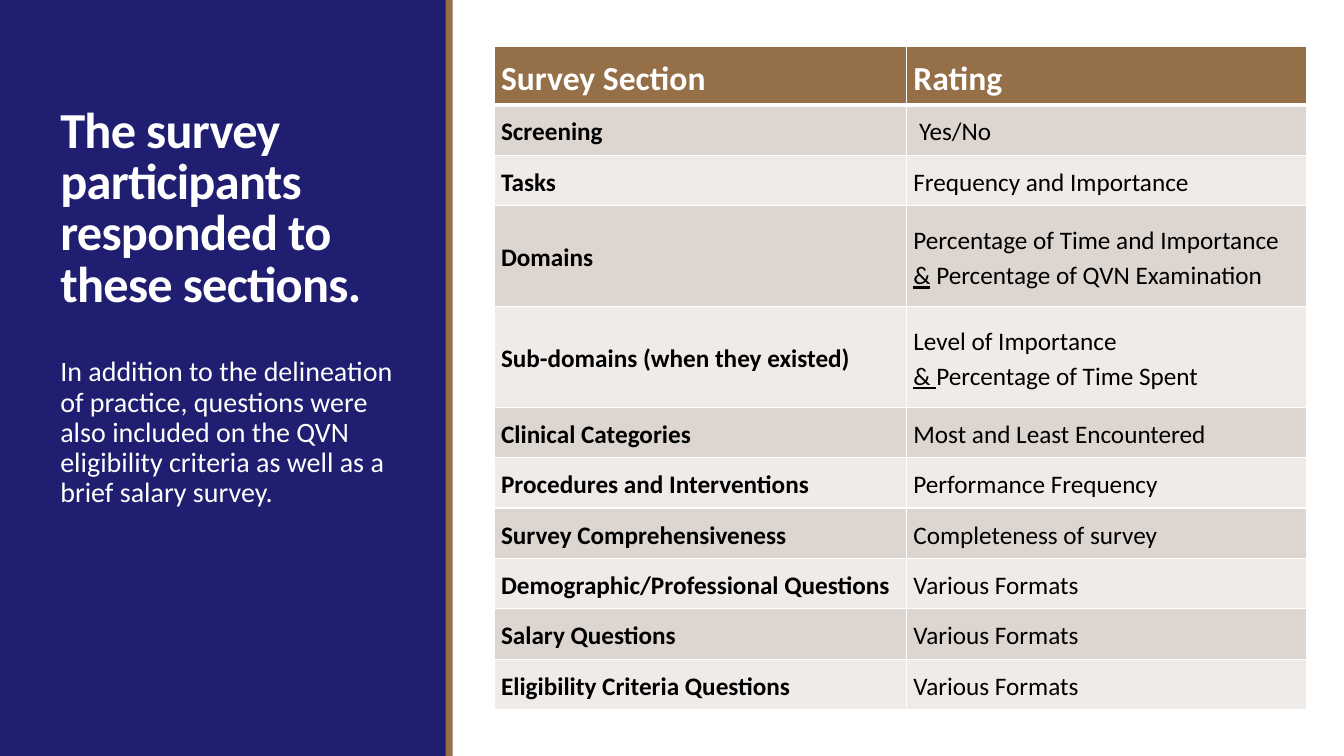
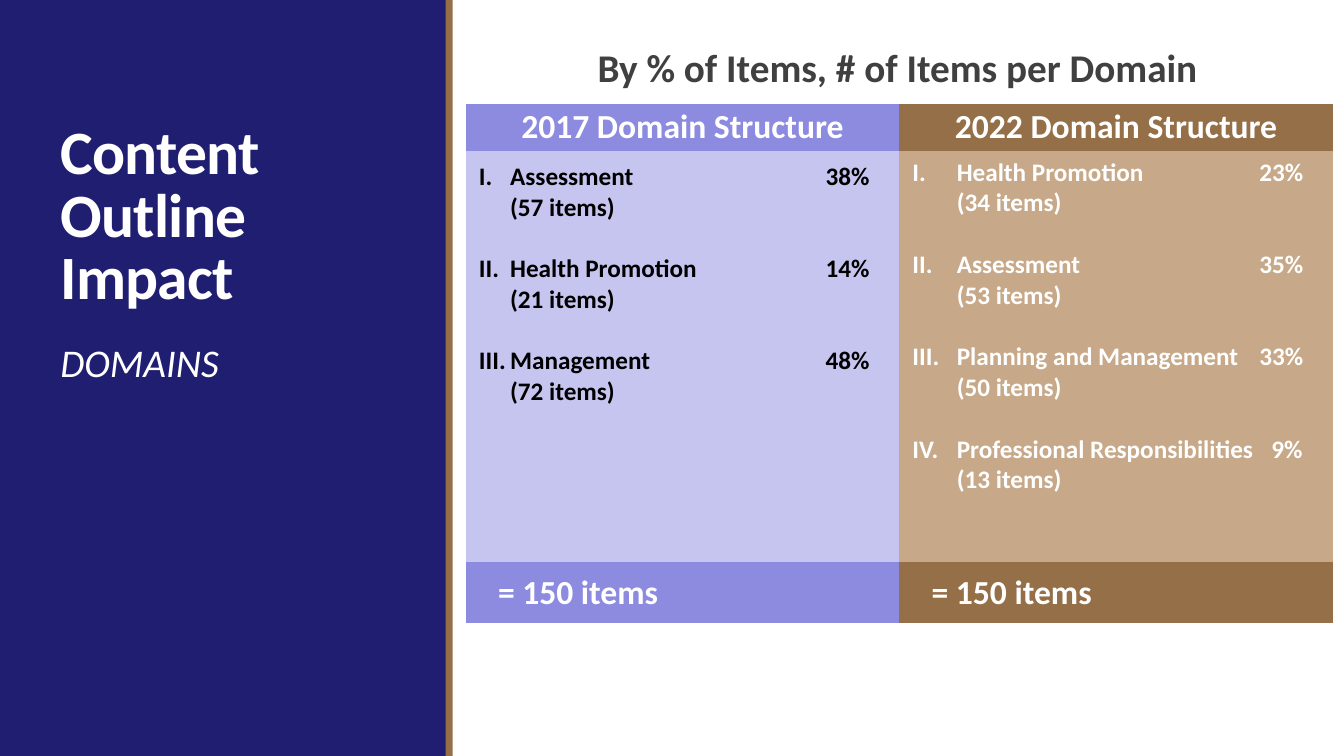
from pptx import Presentation
from pptx.dml.color import RGBColor
from pptx.enum.shapes import MSO_SHAPE as Shape
from pptx.enum.text import MSO_ANCHOR as Anchor, PP_ALIGN as Align
from pptx.oxml.xmlchemy import OxmlElement as Element
from pptx.util import Inches, Pt

NAVY = RGBColor(0x20, 0x1E, 0x70)
BROWN = RGBColor(0x95, 0x6F, 0x47)
TAN = RGBColor(0xC7, 0xA9, 0x89)
VIOLET = RGBColor(0x8D, 0x8B, 0xE0)
LILAC = RGBColor(0xC6, 0xC5, 0xEF)
STONE = RGBColor(0xDD, 0xD5, 0xCF)
PALE_STONE = RGBColor(0xEF, 0xEB, 0xE9)
CHARCOAL = RGBColor(0x40, 0x40, 0x40)
WHITE = RGBColor(0xFF, 0xFF, 0xFF)
BLACK = RGBColor(0x00, 0x00, 0x00)

PLAIN_TABLE_STYLE = "{2D5ABB26-0587-4C30-8999-92F81FD0307C}"

SURVEY_SECTIONS = [
    ("Screening", [" Yes/No"]),
    ("Tasks", ["Frequency and Importance"]),
    ("Domains", ["Percentage of Time and Importance ", "&", " Percentage of QVN Examination"]),
    ("Sub-domains (when they existed)", ["Level of Importance \n", "& ", "Percentage of Time Spent"]),
    ("Clinical Categories", ["Most and Least Encountered"]),
    ("Procedures and Interventions", ["Performance Frequency"]),
    ("Survey Comprehensiveness", ["Completeness of survey"]),
    ("Demographic/Professional Questions", ["Various Formats"]),
    ("Salary Questions", ["Various Formats"]),
    ("Eligibility Criteria Questions", ["Various Formats"]),
]

DOMAINS_2017 = [
    ("Assessment", "38%", "(57 items)"),
    ("Health Promotion", "14%", "(21 items)"),
    ("Management", "48%", "(72 items)"),
]
DOMAINS_2022 = [
    ("Health Promotion", "23%", "(34 items)"),
    ("Assessment", "35%", "(53 items)"),
    ("Planning and Management", "33%", "(50 items)"),
    ("Professional Responsibilities", "9%", "(13 items)"),
]


class Deck:
    font = "Calibri"

    def __init__(self):
        self.file = Presentation()
        self.file.slide_width = Inches(13.33)
        self.file.slide_height = Inches(7.5)
        self.slide = None

    def start(self, title, title_size):
        self.slide = self.file.slides.add_slide(self.file.slide_layouts[6])
        self.band(0, 4.43, NAVY)
        self.band(4.42, 0.07, BROWN)
        heading = self.text(title, 0.5, 0.65, 3.5, 2.5, title_size, bold=True,
                            anchor=Anchor.BOTTOM, spacing=0.85)
        heading.font._element.set("spc", "-50")

    def band(self, left, width, color):
        band = self.slide.shapes.add_shape(
            Shape.RECTANGLE, Inches(left), 0, Inches(width), self.file.slide_height)
        band.shadow.inherit = False
        band.fill.solid()
        band.fill.fore_color.rgb = color
        band.line.fill.background()

    def run(self, paragraph, words, size, color, bold=False):
        run = paragraph.add_run()
        run.text = words
        run.font.name = self.font
        run.font.size = Pt(size)
        run.font.color.rgb = color
        run.font.bold = bold
        return run

    def text(self, words, left, top, width, height, size, color=WHITE, bold=False,
             anchor=Anchor.TOP, align=Align.LEFT, spacing=0.9, inset=0.1):
        frame = self.slide.shapes.add_textbox(
            Inches(left), Inches(top), Inches(width), Inches(height)).text_frame
        frame.word_wrap = True
        frame.vertical_anchor = anchor
        frame.margin_left = frame.margin_right = Inches(inset)
        paragraph = frame.paragraphs[0]
        paragraph.alignment = align
        paragraph.line_spacing = spacing
        return self.run(paragraph, words, size, color, bold)

    def table(self, left, top, columns, rows):
        table = self.slide.shapes.add_table(
            len(rows), len(columns), Inches(left), Inches(top),
            Inches(sum(columns)), Inches(sum(rows))).table
        table._tbl.tblPr.find("{*}tableStyleId").text = PLAIN_TABLE_STYLE
        table.horz_banding = False
        for column, width in zip(table.columns, columns):
            column.width = Inches(width)
        for row, height in zip(table.rows, rows):
            row.height = Inches(height)
        return table

    def cell(self, cell, fill, anchor=Anchor.MIDDLE, top=0):
        cell.fill.solid()
        cell.fill.fore_color.rgb = fill
        cell.vertical_anchor = anchor
        cell.margin_left = cell.margin_right = Inches(0.07)
        cell.margin_top, cell.margin_bottom = Inches(top), 0
        return cell.text_frame.paragraphs[0]

    def borders(self, cell, bottom=1, top=1):
        sides = {"lnL": 1, "lnR": 1, "lnT": top, "lnB": bottom}
        for place, (side, width) in enumerate(sides.items()):
            line = Element("a:" + side)
            line.set("w", str(Pt(width)))
            fill = Element("a:solidFill")
            color = Element("a:srgbClr")
            color.set("val", str(WHITE))
            fill.append(color)
            line.append(fill)
            cell._tc.get_or_add_tcPr().insert(place, line)

    def numeral(self, paragraph, number, indent, hanging, tab):
        props = paragraph._p.get_or_add_pPr()
        props.set("marL", str(Inches(indent)))
        props.set("indent", str(-Inches(hanging)))
        numbering = Element("a:buAutoNum")
        numbering.set("type", "romanUcPeriod")
        numbering.set("startAt", str(number))
        stops = Element("a:tabLst")
        stop = Element("a:tab")
        stop.set("pos", str(Inches(tab)))
        stop.set("algn", "l")
        stops.append(stop)
        props.append(numbering)
        props.append(stops)

    def domains(self, cell, fill, color, entries, indent, hanging, top):
        paragraph = self.cell(cell, fill, Anchor.TOP, top)
        for number, (domain, share, items) in enumerate(entries, 1):
            if number > 1:
                paragraph = cell.text_frame.add_paragraph()
                paragraph.space_before = Pt(22)
            share_start = 3.5 if len(share) == 3 else 3.62
            self.numeral(paragraph, number, indent, hanging, share_start)
            self.run(paragraph, f"{domain}\t{share}", 18, color, True)
            paragraph.add_line_break()
            self.run(paragraph, items, 18, color, True)


def survey_sections(deck):
    deck.start("The survey participants responded to these sections.", 36)
    deck.text("In addition to the delineation of practice, questions were also included "
              "on the QVN eligibility criteria as well as a brief salary survey.",
              0.5, 3.5, 3.5, 3.4, 20)
    heights = [0.58] + [1 if len(rating) > 1 else 0.5 for _, rating in SURVEY_SECTIONS]
    table = deck.table(4.9, 0.46, [4.09, 3.97], heights)
    rows = [("Survey Section", ["Rating"])] + SURVEY_SECTIONS
    for index, (section, rating) in enumerate(rows):
        header = index == 0
        fill = BROWN if header else STONE if index % 2 else PALE_STONE
        size, color = (24, WHITE) if header else (18, BLACK)
        for column, parts in enumerate([[section], rating]):
            cell = table.cell(index, column)
            paragraph = deck.cell(cell, fill)
            paragraph.line_spacing = 1.15
            paragraph.space_before, paragraph.space_after = Pt(3), Pt(2)
            for part in parts:
                run = deck.run(paragraph, part.rstrip("\n"), size, color, header or column == 0)
                if part.startswith("&"):
                    run.font.underline = True
                if part.endswith("\n"):
                    paragraph.add_line_break()
            deck.borders(cell, bottom=3 if header else 1, top=3 if index == 1 else 1)


def domain_impact(deck):
    deck.start("Content Outline Impact", 44)
    deck.text("DOMAINS", 0.5, 3.36, 3.5, 3.54, 28).font.italic = True
    table = deck.table(4.62, 1.03, [4.3, 4.3], [0.47, 4.08, 0.6])
    structures = [
        ("2017", VIOLET, LILAC, BLACK, DOMAINS_2017, 0.37, 0.31, 0.1),
        ("2022", BROWN, TAN, WHITE, DOMAINS_2022, 0.5, 0.44, 0.06),
    ]
    for column, (year, accent, fill, color, entries, indent, hanging, top) in enumerate(structures):
        header = deck.cell(table.cell(0, column), accent)
        header.alignment = Align.CENTER
        deck.run(header, f"{year} Domain Structure", 24, WHITE, True)
        deck.domains(table.cell(1, column), fill, color, entries, indent, hanging, top)
        total = deck.cell(table.cell(2, column), accent)
        total._p.get_or_add_pPr().set("marL", str(Inches(0.25)))
        deck.run(total, "= 150 items", 24, WHITE, True)
    deck.text("By % of Items, # of Items per Domain", 5.03, 0.47, 7.74, 0.49, 28,
              CHARCOAL, True, align=Align.CENTER, spacing=0.8, inset=0)


def main():
    deck = Deck()
    survey_sections(deck)
    domain_impact(deck)
    deck.file.save("out.pptx")


if __name__ == "__main__":
    main()
